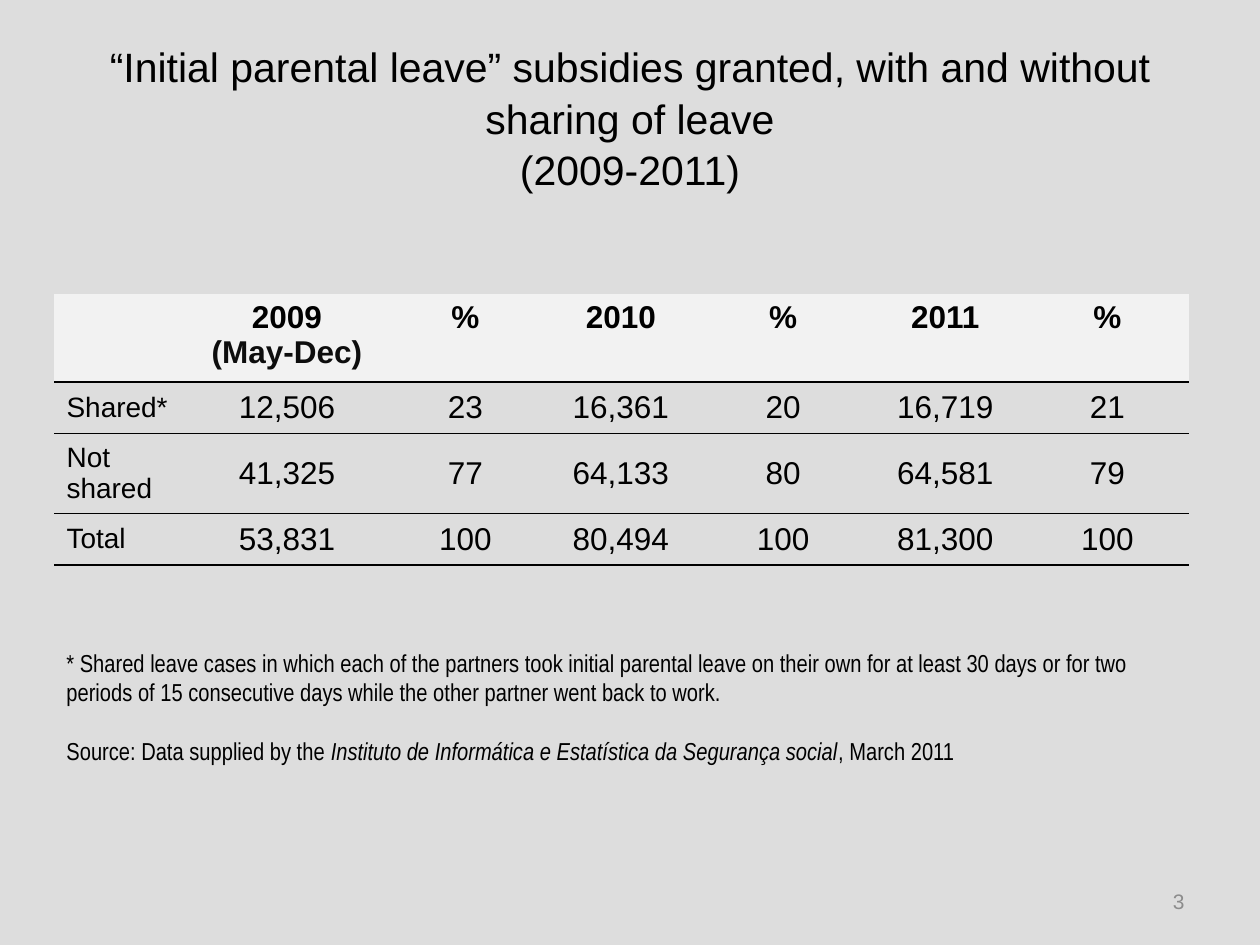
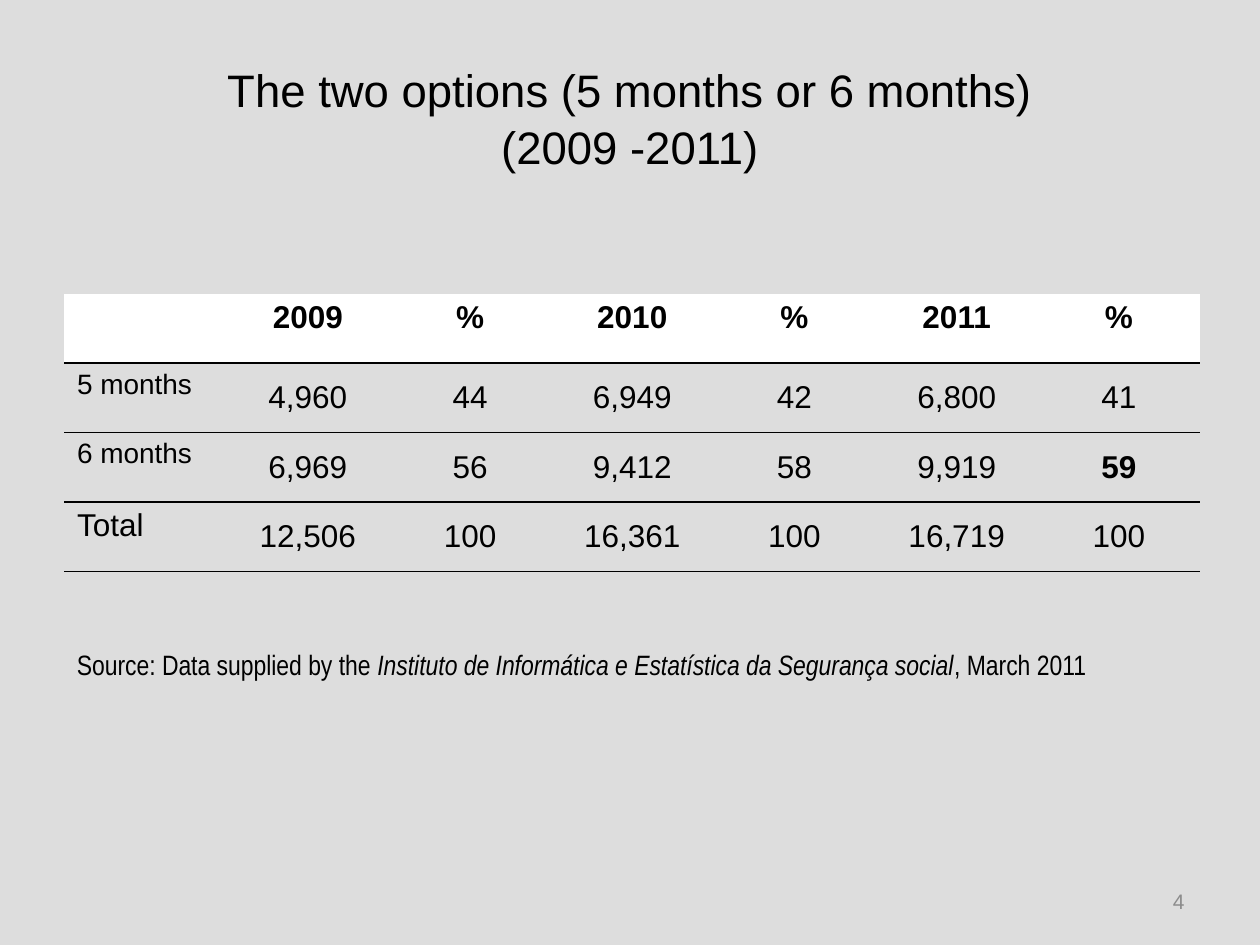
import dataclasses

import pptx
import pptx.dml.color
import pptx.enum.text
import pptx.oxml
import pptx.oxml.ns
import pptx.util

Cm = pptx.util.Cm
Pt = pptx.util.Pt
ALIGN = pptx.enum.text.PP_ALIGN
ANCHOR = pptx.enum.text.MSO_ANCHOR

SOURCE = [
    ("Source: Data supplied by the ", False),
    ("Instituto de Informática e Estatística da Segurança social", True),
    (", March 2011", False),
]

SLIDES = [
    {
        "title": [
            "“Initial parental leave” subsidies granted, with and without sharing of leave",
            "(2009-2011)",
        ],
        "title_size": 23.4,
        "number": "3",
        "left": 1.09,
        "column_widths": [2.6, 4.19, 3.0] + [3.27] * 4,
        "row_heights": [1.68, 1.04, 1.5, 1.04],
        "header_fill": "F2F2F2",
        "label_anchor": ANCHOR.MIDDLE,
        "label_sizes": [16, 16, 16],
        "rows": [
            ["", "2009\n(May-Dec)", "%", "2010", "%", "2011", "%"],
            ["Shared*", "12,506", "23", "16,361", "20", "16,719", "21"],
            ["Not shared", "41,325", "77", "64,133", "80", "64,581", "79"],
            ["Total", "53,831", "100", "80,494", "100", "81,300", "100"],
        ],
        "bold_cells": [],
        "caption": [
            [(
                "* Shared leave cases in which each of the partners took initial parental "
                "leave on their own for at least 30 days or for two periods of 15 "
                "consecutive days while the other partner went back to work.",
                False,
            )],
            SOURCE,
        ],
        "caption_size": 14,
        "caption_box": (23.22, 2.64),
    },
    {
        "title": ["The two options (5 months or 6 months)", "(2009 -2011)"],
        "title_size": 26,
        "number": "4",
        "left": 1.3,
        "column_widths": [3.27] * 7,
        "row_heights": [1.4] * 4,
        "header_fill": "FFFFFF",
        "label_anchor": ANCHOR.TOP,
        "label_sizes": [16, 16, 18],
        "rows": [
            ["", "2009", "%", "2010", "%", "2011", "%"],
            ["5 months", "4,960", "44", "6,949", "42", "6,800", "41"],
            ["6 months", "6,969", "56", "9,412", "58", "9,919", "59"],
            ["Total", "12,506", "100", "16,361", "100", "16,719", "100"],
        ],
        "bold_cells": [(2, 6)],
        "caption": [SOURCE],
        "caption_size": 16,
        "caption_box": (22.81, 0.94),
    },
]


@dataclasses.dataclass(frozen=True)
class Theme:
    background: str = "DDDDDD"
    ink: str = "000000"
    soft_ink: str = "0D0D0D"
    number_ink: str = "8C8C8C"
    font: str = "Arial"
    caption_font: str = "Arial Narrow"
    table_size: float = 18
    number_size: float = 12
    rule_width: float = 1
    title_spacing: float = 1.05
    caption_gap: float = 17
    plain_table_style: str = "{2D5ABB26-0587-4C30-8999-92F81FD0307C}"


THEME = Theme()
TABLE_TOP = 5.92
CAPTION_TOP = 12.93
TITLE_BOX = (1.27, 0.76, 22.86, 3.18)
NUMBER_BOX = (18.21, 17.65, 5.92, 1.02)


def set_values(target, values):
    for name, value in values.items():
        setattr(target, name, value)


def add_run(paragraph, text, size, color=THEME.ink, **font_values):
    run = paragraph.add_run()
    run.text = text
    set_values(run.font, {"name": THEME.font, "size": Pt(size), **font_values})
    run.font.color.rgb = pptx.dml.color.RGBColor.from_string(color)


def fill_paragraphs(frame, lines, **paragraph_values):
    for index, runs in enumerate(lines):
        paragraph = frame.add_paragraph() if index else frame.paragraphs[0]
        set_values(paragraph, paragraph_values)
        for text, size, font_values in runs:
            add_run(paragraph, text, size, **font_values)


def add_text(slide, box, anchor, lines, **paragraph_values):
    frame = slide.shapes.add_textbox(*map(Cm, box)).text_frame
    set_values(frame, {"word_wrap": True, "vertical_anchor": anchor})
    fill_paragraphs(frame, lines, **paragraph_values)
    return frame


def rule_below(cell):
    properties = cell._tc.get_or_add_tcPr()
    line = pptx.oxml.parse_xml(
        f'<a:lnB {pptx.oxml.ns.nsdecls("a")} w="{Pt(THEME.rule_width)}">'
        f'<a:solidFill><a:srgbClr val="{THEME.ink}"/></a:solidFill></a:lnB>'
    )
    properties.insert(0, line)


def fill_cell(cell, content, row, column):
    is_header, is_label = row == 0, column == 0
    if is_header:
        cell.fill.solid()
        cell.fill.fore_color.rgb = pptx.dml.color.RGBColor.from_string(content["header_fill"])
        anchor = ANCHOR.TOP
    else:
        cell.fill.background()
        anchor = content["label_anchor"] if is_label else ANCHOR.MIDDLE
    cell.vertical_anchor = anchor
    rule_below(cell)

    text = content["rows"][row][column]
    if not text:
        return
    size = content["label_sizes"][row - 1] if is_label else THEME.table_size
    bold = is_header or (row, column) in content["bold_cells"]
    lines = [
        [(line, size, {"bold": bold, "color": THEME.soft_ink if index else THEME.ink})]
        for index, line in enumerate(text.split("\n"))
    ]
    fill_paragraphs(cell.text_frame, lines, alignment=ALIGN.LEFT if is_label else ALIGN.CENTER)


def add_subsidy_table(slide, content):
    rows, widths, heights = content["rows"], content["column_widths"], content["row_heights"]
    box = (content["left"], TABLE_TOP, sum(widths), sum(heights))
    table = slide.shapes.add_table(len(rows), len(widths), *map(Cm, box)).table
    set_values(table, {"first_row": False, "horz_banding": False})
    style = table._tbl.tblPr.find(pptx.oxml.ns.qn("a:tableStyleId"))
    style.text = THEME.plain_table_style
    for column, width in zip(table.columns, widths):
        column.width = Cm(width)
    for row, height in zip(table.rows, heights):
        row.height = Cm(height)
    for row in range(len(rows)):
        for column in range(len(widths)):
            fill_cell(table.cell(row, column), content, row, column)


def add_caption(slide, content):
    box = (content["left"], CAPTION_TOP, *content["caption_box"])
    lines = [
        [
            (text, content["caption_size"], {"name": THEME.caption_font, "italic": italic})
            for text, italic in runs
        ]
        for runs in content["caption"]
    ]
    frame = add_text(slide, box, ANCHOR.TOP, lines)
    for paragraph in frame.paragraphs[1:]:
        paragraph.space_before = Pt(THEME.caption_gap)


def build_slide(presentation, content):
    slide = presentation.slides.add_slide(presentation.slide_layouts[6])
    title_lines = [[(line, content["title_size"], {})] for line in content["title"]]
    add_text(slide, TITLE_BOX, ANCHOR.MIDDLE, title_lines,
             alignment=ALIGN.CENTER, line_spacing=THEME.title_spacing)
    add_subsidy_table(slide, content)
    add_caption(slide, content)
    number = [[(content["number"], THEME.number_size, {"color": THEME.number_ink})]]
    add_text(slide, NUMBER_BOX, ANCHOR.MIDDLE, number, alignment=ALIGN.RIGHT)


def main():
    presentation = pptx.Presentation()
    set_values(presentation, {"slide_width": Cm(25.4), "slide_height": Cm(19.05)})
    background = presentation.slide_master.background.fill
    background.solid()
    background.fore_color.rgb = pptx.dml.color.RGBColor.from_string(THEME.background)
    for content in SLIDES:
        build_slide(presentation, content)
    presentation.save("out.pptx")


if __name__ == "__main__":
    main()
